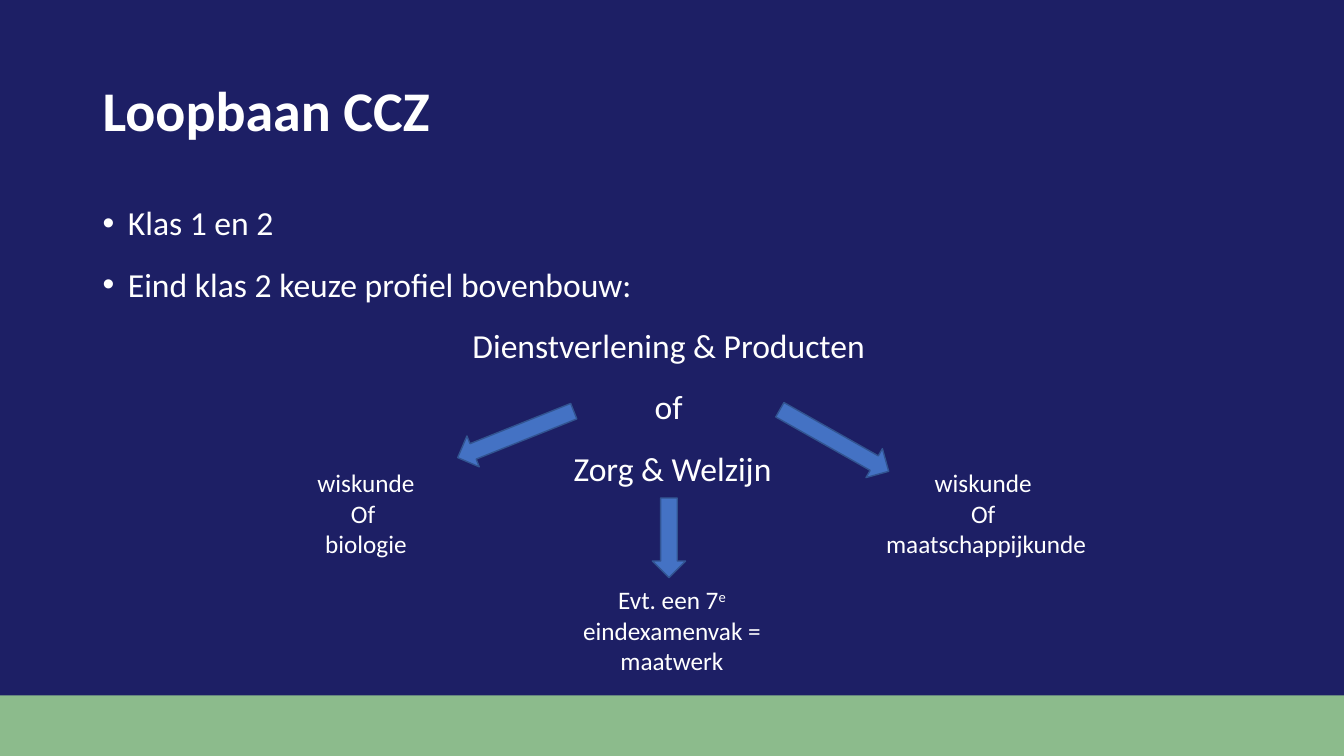
from lxml import etree
from pptx import Presentation
from pptx import util as u
from pptx.dml.color import RGBColor
from pptx.enum import shapes, text
from pptx.oxml import ns

COLORS = {
    "navy": "1D1F65",
    "green": "8CBB8C",
    "white": "FFFFFF",
    "arrow": "4472C4",
    "arrow_edge": "325491",
}


class CareerSlide:
    font = "Calibri"

    def __init__(self, deck):
        self.slide = deck.slides.add_slide(deck.slide_layouts[6])
        background = self.slide.background.fill
        background.solid()
        background.fore_color.rgb = self.color("navy")

    def color(self, name):
        return RGBColor.from_string(COLORS[name])

    def shape(self, kind, box, fill, edge=None, rotation=0):
        shape = self.slide.shapes.add_shape(kind, *map(u.Inches, box))
        shape.shadow.inherit = False
        shape.rotation = rotation
        shape.fill.solid()
        shape.fill.fore_color.rgb = self.color(fill)
        if edge:
            shape.line.color.rgb = self.color(edge)
            shape.line.width = u.Pt(1)
        else:
            shape.line.fill.background()

    def arrow(self, box, rotation=0):
        self.shape(shapes.MSO_SHAPE.DOWN_ARROW, box, "arrow", "arrow_edge", rotation)

    def textbox(self, box, lines, size, bold=False, centered=True,
                spacing=None, gap=0, bullets=0, anchor=text.MSO_ANCHOR.TOP):
        frame = self.slide.shapes.add_textbox(*map(u.Inches, box)).text_frame
        frame.word_wrap = True
        frame.vertical_anchor = anchor
        frame.text = "\n".join(lines)
        for index, paragraph in enumerate(frame.paragraphs):
            if index < bullets:
                self.bullet(paragraph)
            elif centered:
                paragraph.alignment = text.PP_ALIGN.CENTER
            if spacing:
                paragraph.line_spacing = spacing
            if index and gap:
                paragraph.space_before = u.Pt(gap)
            for run in paragraph.runs:
                self.style(run, size, bold)
        return frame

    def bullet(self, paragraph):
        properties = paragraph._p.get_or_add_pPr()
        properties.set("marL", str(u.Inches(0.25)))
        properties.set("indent", str(u.Inches(-0.25)))
        etree.SubElement(properties, ns.qn("a:buFont")).set("typeface", "Arial")
        etree.SubElement(properties, ns.qn("a:buChar")).set("char", "•")

    def style(self, run, size, bold=False):
        run.font.name = self.font
        run.font.size = u.Pt(size)
        run.font.bold = bold
        run.font.color.rgb = self.color("white")

    def add_run(self, paragraph, words, size, superscript=False):
        run = paragraph.add_run()
        run.text = words
        self.style(run, size)
        if superscript:
            run._r.get_or_add_rPr().set("baseline", "30000")


def main():
    deck = Presentation()
    deck.slide_width = u.Inches(13.33)
    deck.slide_height = u.Inches(7.5)
    career = CareerSlide(deck)

    career.shape(shapes.MSO_SHAPE.RECTANGLE, (0, 6.9, 13.33, 0.6), "green")
    career.textbox((0.92, 0.4, 11.5, 1.45), ["Loopbaan CCZ"], 40, bold=True,
                   centered=False, spacing=0.9, anchor=text.MSO_ANCHOR.MIDDLE)
    profiles = ["Klas 1 en 2", "Eind klas 2 keuze profiel bovenbouw:",
                "Dienstverlening & Producten ", "of ", "Zorg & Welzijn"]
    career.textbox((0.92, 2, 11.5, 4.76), profiles, 24,
                   spacing=0.9, gap=18, bullets=2)

    career.textbox((2.41, 4.59, 2.44, 1.01), ["wiskunde", "Of ", "biologie"], 18)
    career.textbox((8.64, 4.59, 2.28, 1.01),
                   ["wiskunde ", "Of ", "maatschappijkunde"], 18)
    extra_subject = career.textbox((5.68, 5.75, 1.97, 1.01), ["Evt. een 7"], 18)
    sentence = extra_subject.paragraphs[0]
    career.add_run(sentence, "e", 18, superscript=True)
    career.add_run(sentence, " eindexamenvak = maatwerk", 18)

    career.arrow((8.11, 3.75, 0.33, 1.24), 299.5)
    career.arrow((4.95, 3.69, 0.33, 1.24), 68.2)
    career.arrow((6.47, 4.94, 0.33, 0.79))

    deck.save("out.pptx")


if __name__ == "__main__":
    main()
